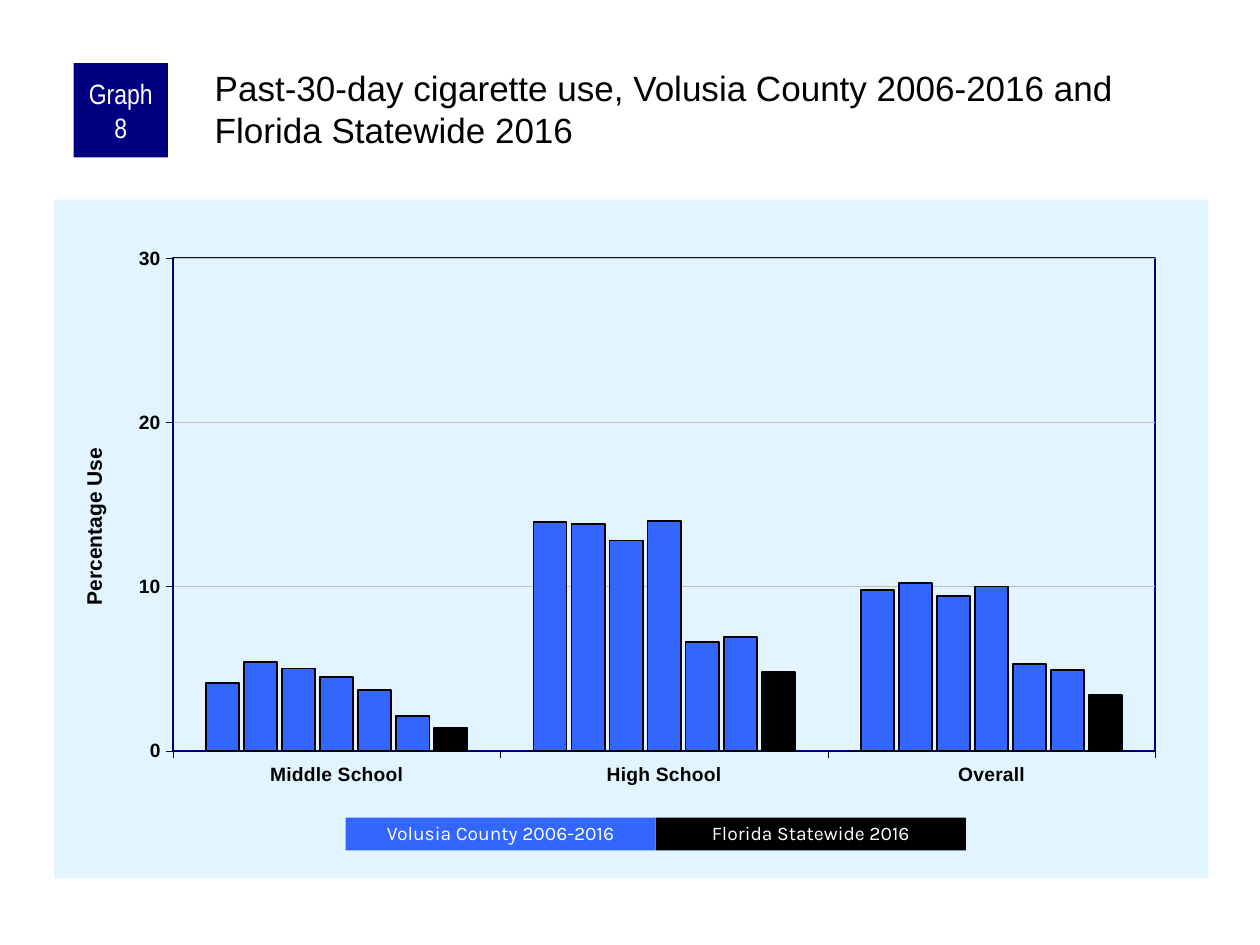
from lxml.etree import SubElement
from pptx import Presentation
from pptx.chart.data import CategoryChartData
from pptx.dml.color import RGBColor
from pptx.enum.chart import XL_CHART_TYPE as ChartType, XL_TICK_MARK as TickMark
from pptx.enum.shapes import MSO_SHAPE as ShapeType
from pptx.enum.text import MSO_ANCHOR as Anchor, MSO_AUTO_SIZE as AutoSize, PP_ALIGN as Align
from pptx.oxml import parse_xml
from pptx.oxml.ns import nsdecls, qn
from pptx.util import Pt

NAVY = RGBColor(0x00, 0x00, 0x80)
BLUE = RGBColor(0x33, 0x66, 0xFF)
PALE_BLUE = RGBColor(0xE1, 0xF4, 0xFF)
GRAY = RGBColor(0xC0, 0xC0, 0xC0)
BLACK = RGBColor(0, 0, 0)
WHITE = RGBColor(0xFF, 0xFF, 0xFF)

CATEGORIES = ["Middle School", "High School", "Overall"]
SERIES = [
    (4.1, 13.9, 9.8),
    (5.4, 13.8, 10.2),
    (5, 12.8, 9.4),
    (4.5, 14, 10),
    (3.7, 6.6, 5.3),
    (2.1, 6.9, 4.9),
    (1.4, 4.8, 3.4),
]


def set_font(font, name, size, color, bold=False):
    font.name, font.size, font.bold = name, Pt(size), bold
    font.color.rgb = color


def set_line(line, color, width):
    line.color.rgb = color
    line.width = Pt(width)


def set_layout(parent, index, **values):
    """Give a chart part a manual layout, as fractions of the chart."""
    for old in parent.findall(qn("c:layout")):
        parent.remove(old)
    layout = parse_xml(f"<c:layout {nsdecls('c')}><c:manualLayout/></c:layout>")
    for tag, value in values.items():
        SubElement(layout[0], qn(f"c:{tag}")).set("val", str(value))
    parent.insert(index, layout)


def area_format(fill, line):
    return parse_xml(f"<c:spPr {nsdecls('c', 'a')}>{fill}<a:ln w='12700'>{line}</a:ln></c:spPr>")


def solid(color):
    return f"<a:solidFill><a:srgbClr val='{color}'/></a:solidFill>"


def add_label(slide, box, text, color, font_name, size, inset=7.2, spacing=None):
    """Filled rectangle with white centred text."""
    shape = slide.shapes.add_shape(ShapeType.RECTANGLE, *map(Pt, box))
    shape.shadow.inherit = False
    shape.fill.solid()
    shape.fill.fore_color.rgb = color
    shape.line.fill.background()
    frame = shape.text_frame
    frame.word_wrap = True
    frame.vertical_anchor = Anchor.MIDDLE
    frame.margin_left = frame.margin_right = Pt(inset)
    frame.margin_top = frame.margin_bottom = 0
    frame.text = text
    paragraph = frame.paragraphs[0]
    paragraph.alignment = Align.CENTER
    paragraph.line_spacing = spacing
    set_font(paragraph.font, font_name, size, WHITE)


def add_header(slide, left, top, width, height):
    # Graph number
    badge = 54
    add_label(slide, (left, top, badge, badge), "Graph 8", NAVY, "Arial Narrow", 16, 3.6)

    # Title
    title = slide.shapes.title
    offset = 78.5
    title.left, title.top = Pt(left + offset), Pt(top)
    title.width, title.height = Pt(width - offset), Pt(height)
    frame = title.text_frame
    frame.word_wrap = True
    frame.auto_size = AutoSize.NONE
    frame.vertical_anchor = Anchor.TOP
    frame.margin_left = frame.margin_top = Pt(2.2)
    frame.margin_right = frame.margin_bottom = 0
    frame.text = "Past-30-day cigarette use, Volusia County 2006-2016 and Florida Statewide 2016"
    paragraph = frame.paragraphs[0]
    paragraph.alignment = Align.LEFT
    set_font(paragraph.font, "Arial", 20, BLACK)


def add_usage_chart(slide, left, top, width, height):
    data = CategoryChartData()
    data.categories = CATEGORIES
    for number, values in enumerate(SERIES, 1):
        data.add_series(f"Series {number}", values)
    chart = slide.shapes.add_chart(
        ChartType.COLUMN_CLUSTERED, Pt(left), Pt(top), Pt(width), Pt(height), data
    ).chart
    chart.has_title = chart.has_legend = False
    set_font(chart.font, "Arial", 8, BLACK)

    # Columns: the last series is the state
    plot = chart.plots[0]
    plot.gap_width, plot.overlap = 200, -15
    plot.vary_by_categories = False
    for number, series in enumerate(plot.series, 1):
        series.format.fill.solid()
        series.format.fill.fore_color.rgb = BLACK if number == len(SERIES) else BLUE
        set_line(series.format.line, BLACK, 1)

    # Axes
    for axis in (chart.category_axis, chart.value_axis):
        axis.major_tick_mark, axis.minor_tick_mark = TickMark.OUTSIDE, TickMark.NONE
        set_font(axis.tick_labels.font, "Arial", 11, BLACK, True)
        set_line(axis.format.line, BLACK, 0.25)
    value_axis = chart.value_axis
    value_axis.minimum_scale, value_axis.maximum_scale = 0, 30
    value_axis.major_unit = 10
    set_line(value_axis.major_gridlines.format.line, GRAY, 0.25)
    frame = value_axis.axis_title.text_frame
    frame.text = "Percentage Use"
    set_font(frame.paragraphs[0].font, "Arial", 12, BLACK, True)
    set_layout(frame._txBody.getparent().getparent(), 1, xMode="edge", yMode="edge", x=0.02, y=0.36)

    # Plot frame and chart background
    chart_xml = chart._chartSpace.find(qn("c:chart"))
    plot_area = chart_xml.find(qn("c:plotArea"))
    set_layout(plot_area, 0, layoutTarget="inner", xMode="edge", yMode="edge",
               x=0.103, y=0.086, w=0.851, h=0.726)
    plot_area.append(area_format("<a:noFill/>", solid(NAVY)))
    chart_xml.addnext(area_format(solid(PALE_BLUE), "<a:noFill/>"))


def add_key(slide, left, top, width, height):
    entries = [("Volusia County 2006-2016", BLUE), ("Florida Statewide 2016", BLACK)]
    step = width / len(entries)
    for index, (text, color) in enumerate(entries):
        add_label(slide, (left + index * step, top, step, height), text, color, "Karla", 11, spacing=0.9)


def main():
    presentation = Presentation()
    presentation.slide_width, presentation.slide_height = Pt(720), Pt(540)
    slide = presentation.slides.add_slide(presentation.slide_layouts[5])
    add_usage_chart(slide, 31, 114, 659.5, 388)
    add_header(slide, 42, 36, 648.5, 60)
    add_key(slide, 197.5, 467.3, 354.5, 18.7)
    presentation.save("out.pptx")


if __name__ == "__main__":
    main()
